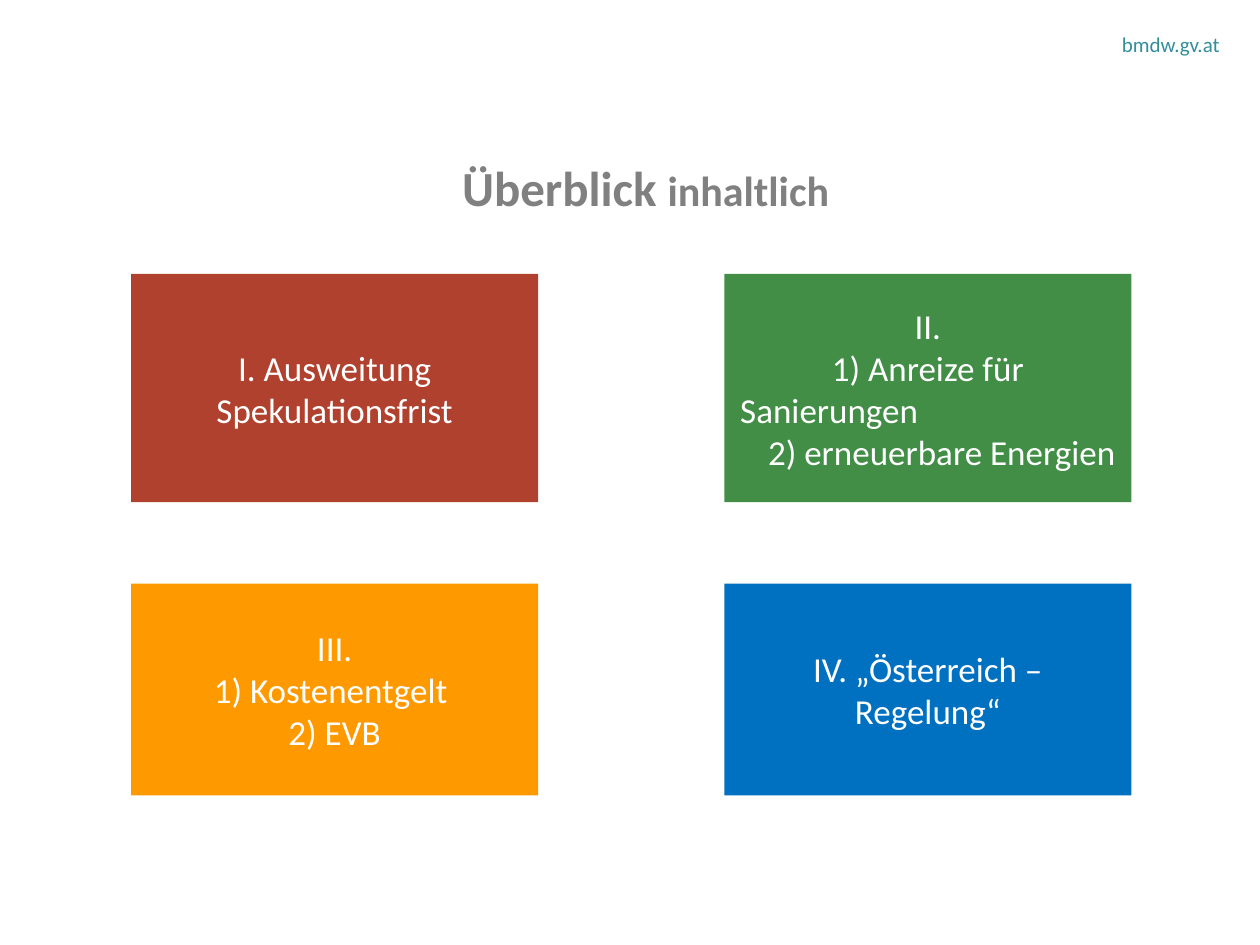
from pptx import Presentation
from pptx.dml.color import RGBColor
from pptx.enum.shapes import MSO_SHAPE
from pptx.enum.text import MSO_ANCHOR, PP_ALIGN
from pptx.util import Pt

FONT = "Calibri"
LEFT, CENTER, RIGHT = PP_ALIGN.LEFT, PP_ALIGN.CENTER, PP_ALIGN.RIGHT
COL_X, COL_W = (75, 414), 232.5
ROWS = ((156.5, 130.5), (333.5, 121))
TOPICS = [
    ("B0412E", [("I. Ausweitung Spekulationsfrist", CENTER)]),
    ("428E46", [("II.", CENTER), ("1) Anreize für", CENTER),
                ("Sanierungen", LEFT), ("2) erneuerbare Energien", RIGHT)]),
    ("FF9900", [("III.", CENTER), ("1) Kostenentgelt ", CENTER), ("2) EVB", CENTER)]),
    ("0070C0", [("IV. „Österreich – Regelung“", CENTER)]),
]


def rgb(value):
    """Return the colour for a hex string."""
    return RGBColor.from_string(value)


def add_run(p, text, size, color, bold=False):
    """Add one formatted run to a paragraph."""
    r = p.add_run()
    r.text = text
    r.font.name, r.font.size, r.font.bold = FONT, Pt(size), bold
    r.font.color.rgb = rgb(color)


def set_margins(tf, side, edge):
    """Set the inner margins of a text frame."""
    tf.margin_left = tf.margin_right = Pt(side)
    tf.margin_top = tf.margin_bottom = Pt(edge)


def add_line(s, box, align, wrap=True):
    """Add a text box without margins and return its paragraph."""
    tf = s.shapes.add_textbox(*map(Pt, box)).text_frame
    tf.word_wrap = wrap
    set_margins(tf, 0, 0)
    p = tf.paragraphs[0]
    p.alignment = align
    return p


def add_header(s, box):
    """Place the web address at the right end of the box."""
    add_run(add_line(s, box, RIGHT), "bmdw.gv.at", 12, "338E9C")


def add_title(s, box):
    """Place the two-size title centred in the box."""
    p = add_line(s, box, CENTER, wrap=False)
    p.line_spacing = Pt(30)
    add_run(p, "Überblick ", 28, "808080", True)
    add_run(p, "inhaltlich", 24, "808080", True)


def add_topic(s, box, color, lines):
    """Draw one coloured topic tile with its text."""
    sp = s.shapes.add_shape(MSO_SHAPE.RECTANGLE, *map(Pt, box))
    sp.shadow.inherit = False
    sp.fill.solid()
    sp.fill.fore_color.rgb = rgb(color)
    sp.line.fill.background()
    tf = sp.text_frame
    tf.word_wrap = True
    tf.vertical_anchor = MSO_ANCHOR.MIDDLE
    set_margins(tf, 9, 3.6)
    for i, (text, align) in enumerate(lines):
        p = tf.add_paragraph() if i else tf.paragraphs[0]
        p.alignment = align
        add_run(p, text, 20, "FFFFFF")


def main():
    """Build and save the slide."""
    prs = Presentation()
    prs.slide_width, prs.slide_height = Pt(720), Pt(540)
    s = prs.slides.add_slide(prs.slide_layouts[6])
    add_header(s, (523.5, 18, 173.5, 14.5))
    add_title(s, (29, 93.5, 680, 90))
    for i, (color, lines) in enumerate(TOPICS):
        row, col = divmod(i, 2)
        top, height = ROWS[row]
        add_topic(s, (COL_X[col], top, COL_W, height), color, lines)
    prs.save("out.pptx")


if __name__ == "__main__":
    main()
